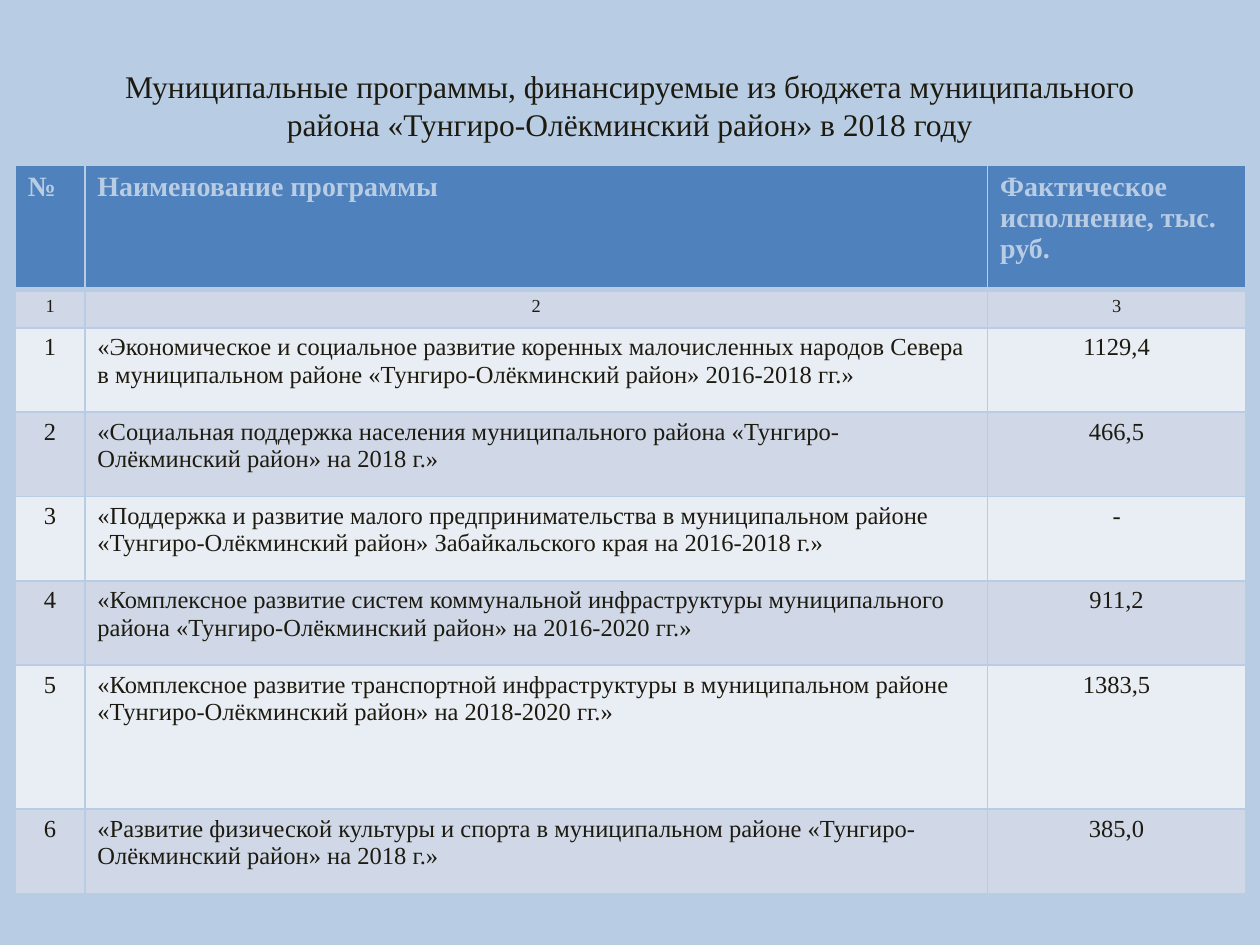
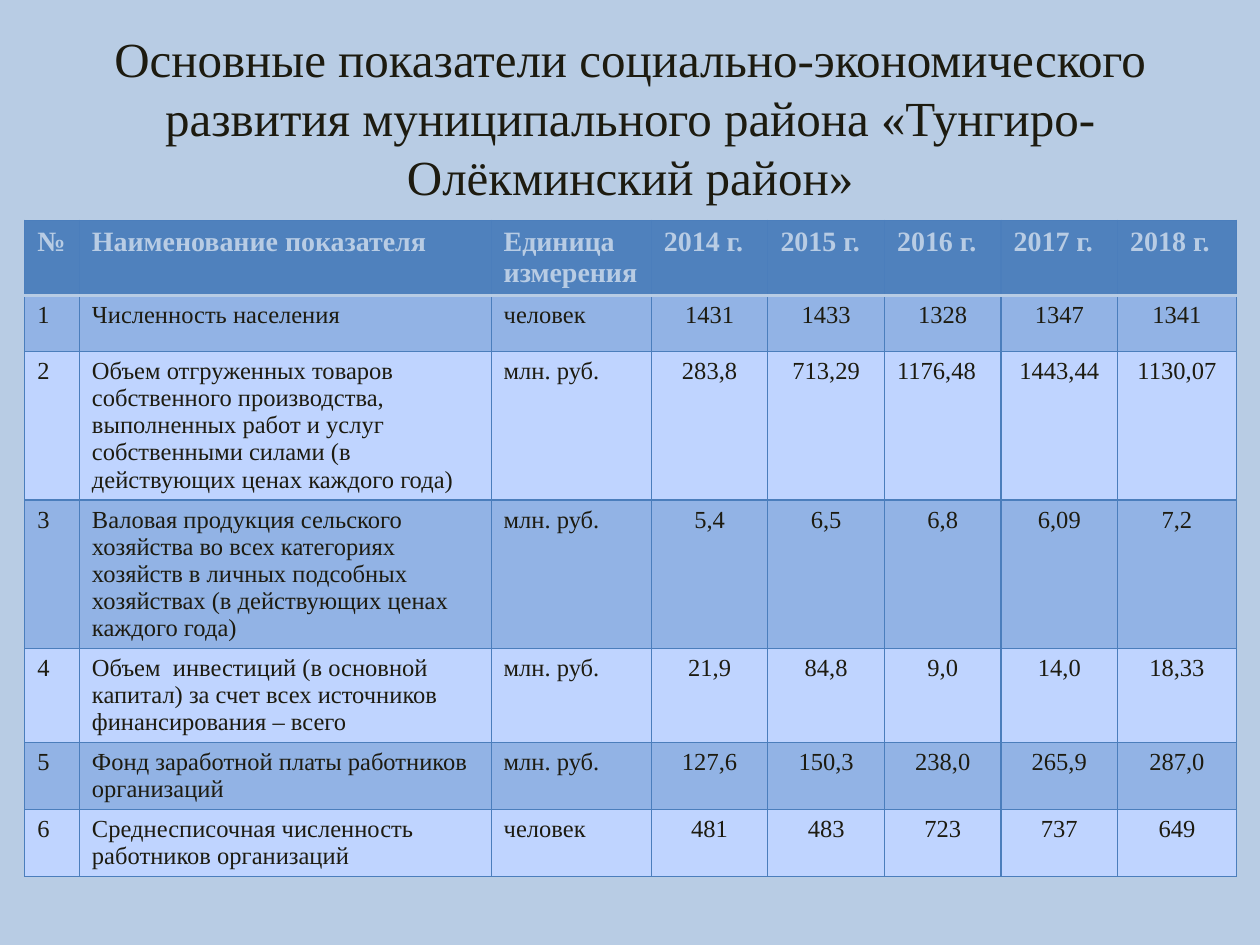
from lxml.etree import SubElement
from pptx import Presentation
from pptx.dml.color import RGBColor
from pptx.enum.text import MSO_ANCHOR as Anchor, MSO_AUTO_SIZE as AutoSize, PP_ALIGN as Align
from pptx.oxml.ns import qn
from pptx.util import Cm, Pt

PAGE, HEADER, INK, GRID = "B8CCE4", "4F81BD", "1D1B10", "4B7EBC"
PALE_BANDS = ("D0D8E8", "E9EDF4")
BLUE_BANDS = ("92B3E5", "BFD4FF")
FONT = "Times New Roman"
ALIGNMENTS = {"l": Align.LEFT, "c": Align.CENTER}

PROGRAMS = [
    ("№", "Наименование программы", "Фактическое исполнение, тыс. руб."),
    ("1", "2", "3"),
    ("1", "«Экономическое и социальное развитие коренных малочисленных народов Севера "
     "в муниципальном районе «Тунгиро-Олёкминский район» 2016-2018 гг.»", "1129,4"),
    ("2", "«Социальная поддержка населения муниципального района "
     "«Тунгиро-Олёкминский район» на 2018 г.»", "466,5"),
    ("3", "«Поддержка и развитие малого предпринимательства в муниципальном районе "
     "«Тунгиро-Олёкминский район» Забайкальского края на 2016-2018 г.»", "-"),
    ("4", "«Комплексное развитие систем коммунальной инфраструктуры муниципального района "
     "«Тунгиро-Олёкминский район» на 2016-2020 гг.»", "911,2"),
    ("5", "«Комплексное развитие транспортной инфраструктуры в муниципальном районе "
     "«Тунгиро-Олёкминский район» на 2018-2020 гг.»", "1383,5"),
    ("6", "«Развитие физической культуры и спорта в муниципальном районе "
     "«Тунгиро-Олёкминский район» на 2018 г.»", "385,0"),
]

INDICATORS = [
    ("№", "Наименование показателя", "Единица измерения",
     *(f"{year} г." for year in range(2014, 2019))),
    ("1", "Численность населения", "человек", "1431", "1433", "1328", "1347", "1341"),
    ("2", "Объем отгруженных товаров собственного производства, выполненных работ и услуг "
     "собственными силами (в действующих ценах каждого года)", "млн. руб.",
     "283,8", "713,29", "1176,48", "1443,44", "1130,07"),
    ("3", "Валовая продукция сельского хозяйства во всех категориях хозяйств в личных "
     "подсобных хозяйствах (в действующих ценах каждого года)", "млн. руб.",
     "5,4", "6,5", "6,8", "6,09", "7,2"),
    ("4", "Объем  инвестиций (в основной капитал) за счет всех источников "
     "финансирования – всего", "млн. руб.", "21,9", "84,8", "9,0", "14,0", "18,33"),
    ("5", "Фонд заработной платы работников организаций", "млн. руб.",
     "127,6", "150,3", "238,0", "265,9", "287,0"),
    ("6", "Среднесписочная численность работников организаций", "человек",
     "481", "483", "723", "737", "649"),
]


def paint(color_format, color):
    color_format.rgb = RGBColor.from_string(color)


def write(frame, text, size=14, color=INK, bold=False, align="l", spacing=None):
    frame.text = text
    paragraph = frame.paragraphs[0]
    paragraph.alignment = ALIGNMENTS[align]
    paragraph.line_spacing = spacing
    font = paragraph.runs[0].font
    font.name, font.size, font.bold = FONT, Pt(size), bold
    paint(font.color, color)


def add_borders(cell, **sides):
    """Draw the sides L, R, T, B, each given as (colour, points)."""
    properties = cell._tc.get_or_add_tcPr()
    for side, (color, points) in sides.items():
        line = SubElement(properties, qn(f"a:ln{side}"), w=str(Pt(points)))
        fill = SubElement(line, qn("a:solidFill"))
        SubElement(fill, qn("a:srgbClr"), val=color)


class Deck:
    def __init__(self):
        self.prs = Presentation()
        self.prs.slide_width, self.prs.slide_height = Cm(25.4), Cm(19.05)
        self.slide = None

    def add_slide(self, title, top, height, size):
        self.slide = self.prs.slides.add_slide(self.prs.slide_layouts[5])
        background = self.slide.background.fill
        background.solid()
        paint(background.fore_color, PAGE)
        heading = self.slide.shapes.title
        heading.left, heading.top = Cm(1.27), Cm(top)
        heading.width, heading.height = Cm(22.86), Cm(height)
        frame = heading.text_frame
        frame.word_wrap, frame.auto_size = True, AutoSize.NONE
        frame.vertical_anchor = Anchor.MIDDLE
        write(frame, title, size=size, align="c")

    def add_table(self, rows, left, top, widths, heights, aligns, bands, grid, rule):
        """Grid is the border of every cell, rule the line under the header."""
        table = self.slide.shapes.add_table(
            len(rows), len(widths), Cm(left), Cm(top),
            Cm(sum(widths)), Cm(sum(heights))).table
        table.horz_banding = False
        for column, width in zip(table.columns, widths):
            column.width = Cm(width)
        for row, height in zip(table.rows, heights):
            row.height = Cm(height)
        for r, texts in enumerate(rows):
            for c, text in enumerate(texts):
                cell = table.cell(r, c)
                add_borders(cell, L=grid, R=grid, T=rule if r == 1 else grid,
                            B=rule if r == 0 else grid)
                cell.fill.solid()
                if r == 0:
                    paint(cell.fill.fore_color, HEADER)
                    write(cell.text_frame, text, size=16, color=PAGE, bold=True)
                else:
                    paint(cell.fill.fore_color, bands[(r - 1) % 2])
                    write(cell.text_frame, text, align=aligns[c])
        return table


def main():
    deck = Deck()

    deck.add_slide("Муниципальные программы, финансируемые из бюджета муниципального района "
                   "«Тунгиро-Олёкминский район» в 2018 году", top=0.92, height=2.4, size=18)
    programs = deck.add_table(
        PROGRAMS, 0.31, 3.33, widths=[1.4, 18.2, 5.2],
        heights=[2.51, 0.77] + [1.7] * 4 + [2.9, 1.7], aligns="clc",
        bands=PALE_BANDS, grid=(PAGE, 1), rule=(PAGE, 3))
    for cell, number in zip(programs.rows[1].cells, PROGRAMS[1]):
        write(cell.text_frame, number, size=10.5, align="c")

    deck.add_slide("Основные показатели социально-экономического развития муниципального "
                   "района «Тунгиро-Олёкминский район»", top=0.76, height=3.18, size=28)
    indicators = deck.add_table(
        INDICATORS, 0.5, 4.44, widths=[1.1, 8.3, 3.23] + [2.35] * 4 + [2.39],
        heights=[1.5, 1.14, 2.99, 2.99, 1.9, 1.34, 1.34], aligns="lll" + "c" * 5,
        bands=BLUE_BANDS, grid=(GRID, 0.75), rule=(PAGE, 2))
    indicators.cell(2, 5).text_frame.paragraphs[0].alignment = Align.LEFT

    deck.prs.save("out.pptx")


if __name__ == "__main__":
    main()
